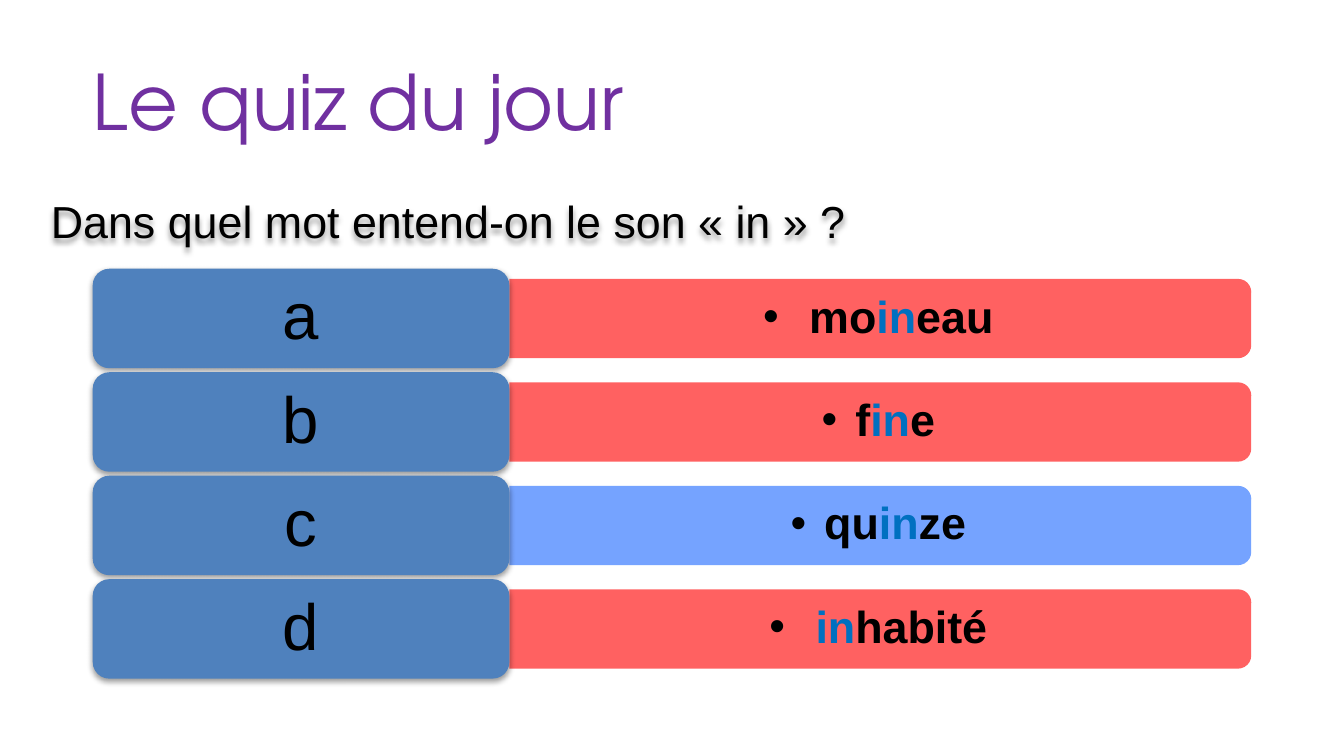
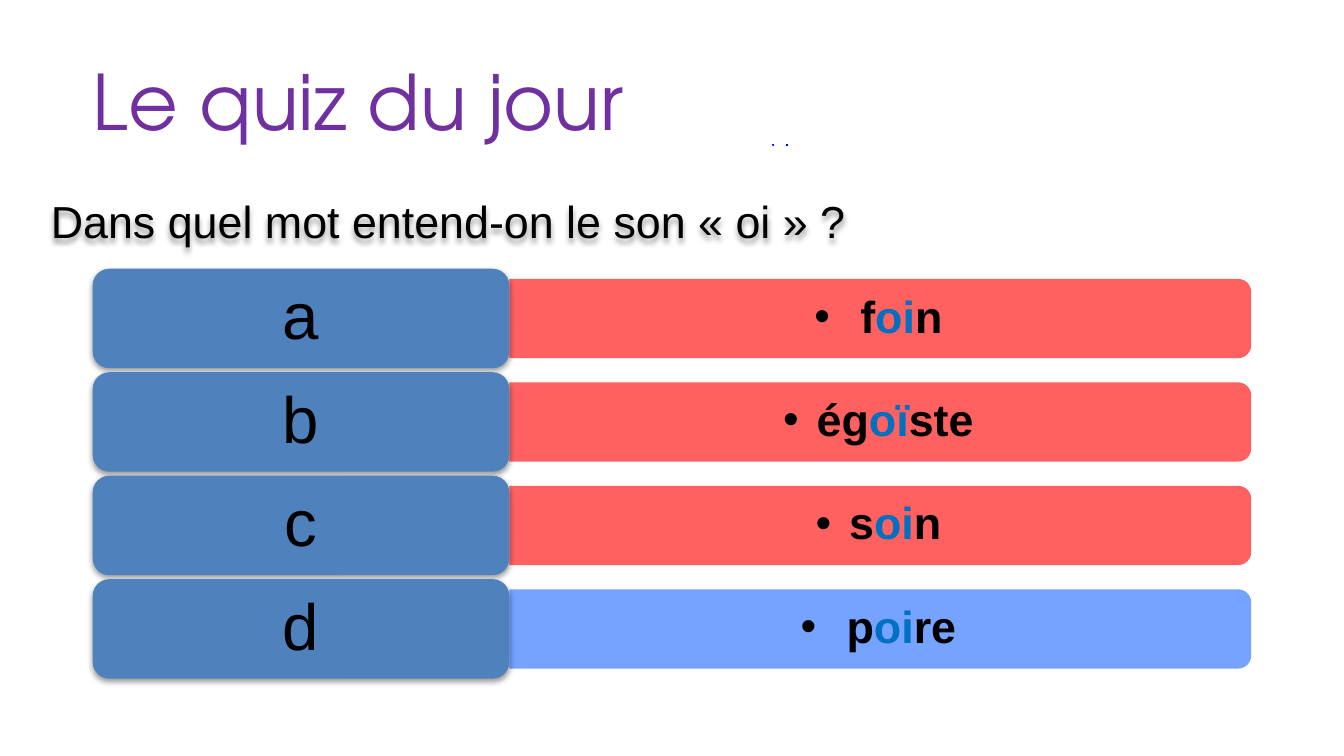
"""Build the two slides of the daily sound quiz."""
from lxml.etree import SubElement
from pptx import Presentation
from pptx.dml.color import RGBColor
from pptx.enum.shapes import MSO_SHAPE
from pptx.enum.text import MSO_ANCHOR, MSO_AUTO_SIZE, PP_ALIGN
from pptx.oxml.ns import qn
from pptx.util import Inches, Pt

PURPLE = RGBColor(0x70, 0x30, 0xA0)
BLACK = RGBColor(0, 0, 0)
STEEL = RGBColor(0x4F, 0x81, 0xBD)
RED = RGBColor(0xFF, 0x50, 0x50)
BLUE = RGBColor(0x66, 0x99, 0xFF)
SOUND = RGBColor(0x00, 0x70, 0xC0)
INK = RGBColor(0, 0, 0xFF)

LEFT, LABEL_W, LABEL_H = 0.69, 3.1, 0.74
BAR_W, BAR_H = 5.52, 0.59
WORD_W, WORD_H = 5.49, 0.53
FIRST_ROW, ROW_PITCH = 2.37, 0.77

QUIZZES = [
    ("in", "c", [(" mo", "in", "eau"), ("f", "in", "e"),
                 ("qu", "in", "ze"), (" ", "in", "habité")]),
    ("oi", "d", [(" f", "oi", "n"), ("ég", "oï", "ste"),
                 ("s", "oi", "n"), (" p", "oi", "re")]),
]
INK_MARKS = [[(5.86, 1.08), (5.85, 1.08)],
             [(5.76, 1.08), (5.75, 1.08), (5.75, 1.07)]]


class QuizDeck:
    """Hold the presentation, the quiz style and the current slide."""

    def __init__(self):
        self.prs = Presentation()
        self.prs.slide_width = Inches(10)
        self.prs.slide_height = Inches(10) * 9 // 16
        self.slide = None

    def run(self, p, text, size, color=BLACK, font="Arial", bold=False):
        r = p.add_run()
        r.text = text
        r.font.name, r.font.size, r.font.bold = font, Pt(size), bold
        r.font.color.rgb = color

    def frame(self, sp, dx, dy, anchor=MSO_ANCHOR.MIDDLE):
        tf = sp.text_frame
        tf.word_wrap = True
        tf.vertical_anchor = anchor
        tf.margin_left = tf.margin_right = Inches(dx)
        tf.margin_top = tf.margin_bottom = Inches(dy)
        return tf

    def cast_shadow(self, sp, blur, dist, opacity):
        sp.shadow.inherit = False
        effects = sp._element.spPr.find(qn("a:effectLst"))
        shadow = SubElement(effects, qn("a:outerShdw"), blurRad=str(Pt(blur)),
                            dist=str(Pt(dist)), dir="5400000", rotWithShape="0")
        color = SubElement(shadow, qn("a:srgbClr"), val=str(BLACK))
        SubElement(color, qn("a:alpha"), val=str(opacity * 1000))

    def shape(self, kind, x, y, w, h, fill):
        sp = self.slide.shapes.add_shape(kind, Inches(x), Inches(y), Inches(w), Inches(h))
        sp.shadow.inherit = False
        sp.fill.solid()
        sp.fill.fore_color.rgb = fill
        sp.line.fill.background()
        return sp

    def textbox(self, x, y, w, h):
        return self.slide.shapes.add_textbox(Inches(x), Inches(y), Inches(w), Inches(h))

    def new_slide(self, title):
        self.slide = self.prs.slides.add_slide(self.prs.slide_layouts[5])
        sp = self.slide.shapes.title
        sp.left, sp.top = Inches(LEFT), Inches(0.2)
        sp.width, sp.height = Inches(8.62), Inches(1.08)
        tf = self.frame(sp, 0, 0)
        tf.auto_size = MSO_AUTO_SIZE.NONE
        p = tf.paragraphs[0]
        p.alignment = PP_ALIGN.LEFT
        self.run(p, title, 41, PURPLE, "TeX Gyre Adventor")

    def question(self, sound):
        sp = self.textbox(0.28, 1.39, 8.97, 0.5)
        self.cast_shadow(sp, 3, 2, 40)
        tf = self.frame(sp, 0.1, 0.05, MSO_ANCHOR.TOP)
        tf.auto_size = MSO_AUTO_SIZE.SHAPE_TO_FIT_TEXT
        self.run(tf.paragraphs[0], f"Dans quel mot entend-on le son « {sound} » ?", 24)

    def bar(self, middle, fill):
        center = LEFT + LABEL_W + BAR_W / 2
        sp = self.shape(MSO_SHAPE.ROUND_2_SAME_RECTANGLE, center - BAR_H / 2,
                        middle - BAR_W / 2, BAR_H, BAR_W, fill)
        sp.rotation = 90
        color = sp._element.spPr.find(qn("a:solidFill"))[0]
        SubElement(color, qn("a:alpha"), val="90000")

    def word(self, middle, parts):
        sp = self.textbox(LEFT + LABEL_W, middle - WORD_H / 2, WORD_W, WORD_H)
        p = self.frame(sp, 0.27, 0.14).paragraphs[0]
        p.alignment, p.line_spacing, p.level = PP_ALIGN.CENTER, 0.9, 1
        pPr = p._p.get_or_add_pPr()
        pPr.set("marL", str(Inches(0.25)))
        pPr.set("indent", str(Inches(-0.25)))
        SubElement(pPr, qn("a:buFont"), typeface="Arial")
        SubElement(pPr, qn("a:buChar"), char="•")
        for text, color in zip(parts, (BLACK, SOUND, BLACK)):
            self.run(p, text, 24, color, bold=True)

    def label(self, middle, letter):
        sp = self.shape(MSO_SHAPE.ROUNDED_RECTANGLE, LEFT, middle - LABEL_H / 2,
                        LABEL_W, LABEL_H, STEEL)
        self.cast_shadow(sp, 3.1, 1.6, 38)
        p = self.frame(sp, 0.15, 0.07).paragraphs[0]
        p.alignment, p.line_spacing = PP_ALIGN.CENTER, 0.9
        self.run(p, letter, 35)

    def ink(self, points):
        start, *rest = [(Inches(x), Inches(y)) for x, y in points]
        builder = self.slide.shapes.build_freeform(*start)
        builder.add_line_segments(rest, close=False)
        sp = builder.convert_to_shape()
        sp.shadow.inherit = False
        sp.fill.background()
        sp.line.color.rgb, sp.line.width = INK, Pt(1)


def main():
    deck = QuizDeck()
    for sound, answer, words in QUIZZES:
        deck.new_slide("Le quiz du jour")
        for i, (letter, parts) in enumerate(zip("abcd", words)):
            middle = FIRST_ROW + i * ROW_PITCH
            deck.bar(middle, BLUE if letter == answer else RED)
            deck.word(middle, parts)
            deck.label(middle, letter)
        deck.question(sound)
    for points in INK_MARKS:
        deck.ink(points)
    deck.prs.save("out.pptx")


if __name__ == "__main__":
    main()
